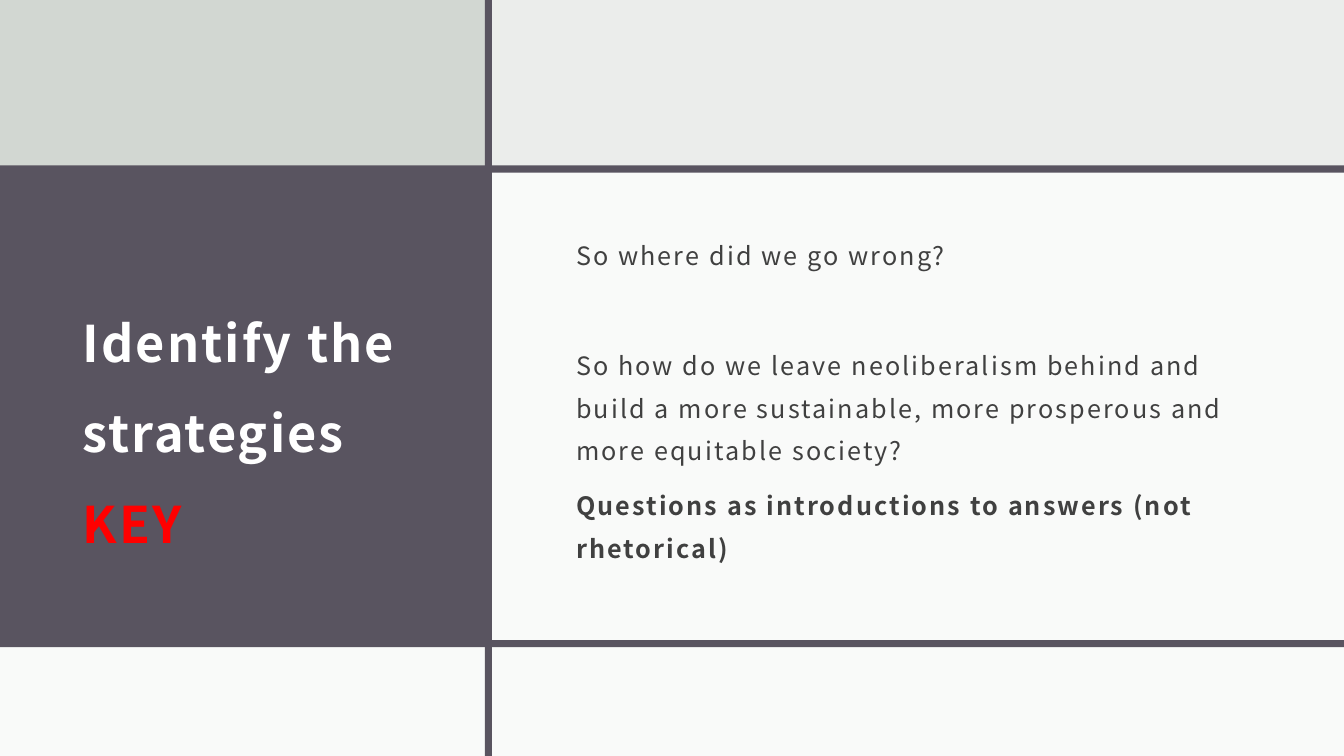
from collections import namedtuple
from dataclasses import dataclass

from lxml.etree import SubElement
from pptx import Presentation
from pptx.dml.color import RGBColor
from pptx.enum.shapes import MSO_SHAPE as Preset
from pptx.enum.text import MSO_ANCHOR as Anchor, MSO_AUTO_SIZE as AutoSize, PP_ALIGN as Align
from pptx.oxml.ns import qn
from pptx.util import Cm, Pt

Box = namedtuple("Box", "left top width height")


@dataclass(frozen=True)
class Theme:
    font: str = "Noto Sans CJK JP"
    canvas: str = "EBEDEB"
    sage: str = "D2D7D2"
    plum: str = "595460"
    white: str = "FFFFFF"
    ink: str = "404040"
    accent: str = "FF0000"
    title_size: int = 36
    body_size: int = 18
    tracking: int = 150
    veil: int = 75


THEME = Theme()
PAGE = Box(0, 0, 33.87, 19.05)
SPLIT = 12.29
HEADER_END = 4.22
FOOTER_START = 16.28
BAR = 0.18
MARGIN_TOP = 1.22
TEXT_HEIGHT = 10.11

BODY = [
    ("So where did we go wrong?", False, 0),
    ("So how do we leave neoliberalism behind and build a more sustainable, "
     "more prosperous and more equitable society?", False, 49),
    ("Questions as introductions to answers (not rhetorical)", True, 9.3),
]


def add_panel(page, box, color, opacity=100):
    panel = page.shapes.add_shape(Preset.RECTANGLE, *map(Cm, box))
    panel.shadow.inherit = False
    panel.line.fill.background()
    panel.fill.solid()
    panel.fill.fore_color.rgb = RGBColor.from_string(color)
    if opacity < 100:
        tint = panel.fill._xPr.find(qn("a:solidFill"))[0]
        SubElement(tint, qn("a:alpha")).set("val", str(opacity * 1000))


def add_span(para, text, size, color, bold):
    span = para.add_run()
    span.text = text
    span.font.name = THEME.font
    span.font.size = Pt(size)
    span.font.bold = bold
    span.font.color.rgb = RGBColor.from_string(color)
    span._r.get_or_add_rPr().set("spc", str(THEME.tracking))


def format_frame(frame, anchor):
    frame.word_wrap = True
    frame.auto_size = AutoSize.NONE
    frame.vertical_anchor = anchor
    frame.margin_left = frame.margin_top = frame.margin_right = Cm(0.3)
    frame.margin_bottom = Cm(0.25)


def draw_panels(page, box):
    right = box.width - SPLIT
    middle = FOOTER_START - HEADER_END
    add_panel(page, box, THEME.canvas)
    add_panel(page, Box(box.left, HEADER_END, SPLIT, middle), THEME.plum)
    add_panel(page, Box(box.left, box.top, SPLIT, HEADER_END), THEME.sage)
    add_panel(page, Box(SPLIT, HEADER_END, right, middle), THEME.white, THEME.veil)
    add_panel(page, Box(box.left, FOOTER_START, box.width, box.height - FOOTER_START),
              THEME.white, THEME.veil)
    for top in (HEADER_END - 0.05, FOOTER_START - 0.15):
        add_panel(page, Box(box.left, top, box.width, BAR), THEME.plum)
    add_panel(page, Box(SPLIT - 0.07, box.top, BAR, box.height), THEME.plum)


def draw_title(page, box):
    title = page.shapes.title
    title.element.getparent().append(title.element)
    title.left, title.top = Cm(box.left + 1.78), Cm(box.top + MARGIN_TOP)
    title.width, title.height = Cm(9.47), Cm(TEXT_HEIGHT)
    format_frame(title.text_frame, Anchor.MIDDLE)
    para = title.text_frame.paragraphs[0]
    para.alignment = Align.LEFT
    para.line_spacing = 1.5
    add_span(para, "Identify the strategies", THEME.title_size, THEME.white, True)
    para.add_line_break()
    add_span(para, "KEY", THEME.title_size, THEME.accent, True)


def draw_body(page, box):
    body = page.shapes.add_textbox(Cm(box.left + 1.93), Cm(box.top + MARGIN_TOP),
                                   Cm(17.86), Cm(TEXT_HEIGHT))
    frame = body.text_frame
    format_frame(frame, Anchor.TOP)
    for index, (text, bold, gap) in enumerate(BODY):
        para = frame.add_paragraph() if index else frame.paragraphs[0]
        para.line_spacing = 1.4
        para.space_before = Pt(gap)
        add_span(para, text, THEME.body_size, THEME.ink, bold)


def main():
    deck = Presentation()
    deck.slide_width, deck.slide_height = Cm(PAGE.width), Cm(PAGE.height)
    page = deck.slides.add_slide(deck.slide_layouts[5])
    middle = FOOTER_START - HEADER_END
    draw_panels(page, PAGE)
    draw_title(page, Box(0, HEADER_END, SPLIT, middle))
    draw_body(page, Box(SPLIT, HEADER_END, PAGE.width - SPLIT, middle))
    deck.save("out.pptx")


if __name__ == "__main__":
    main()
